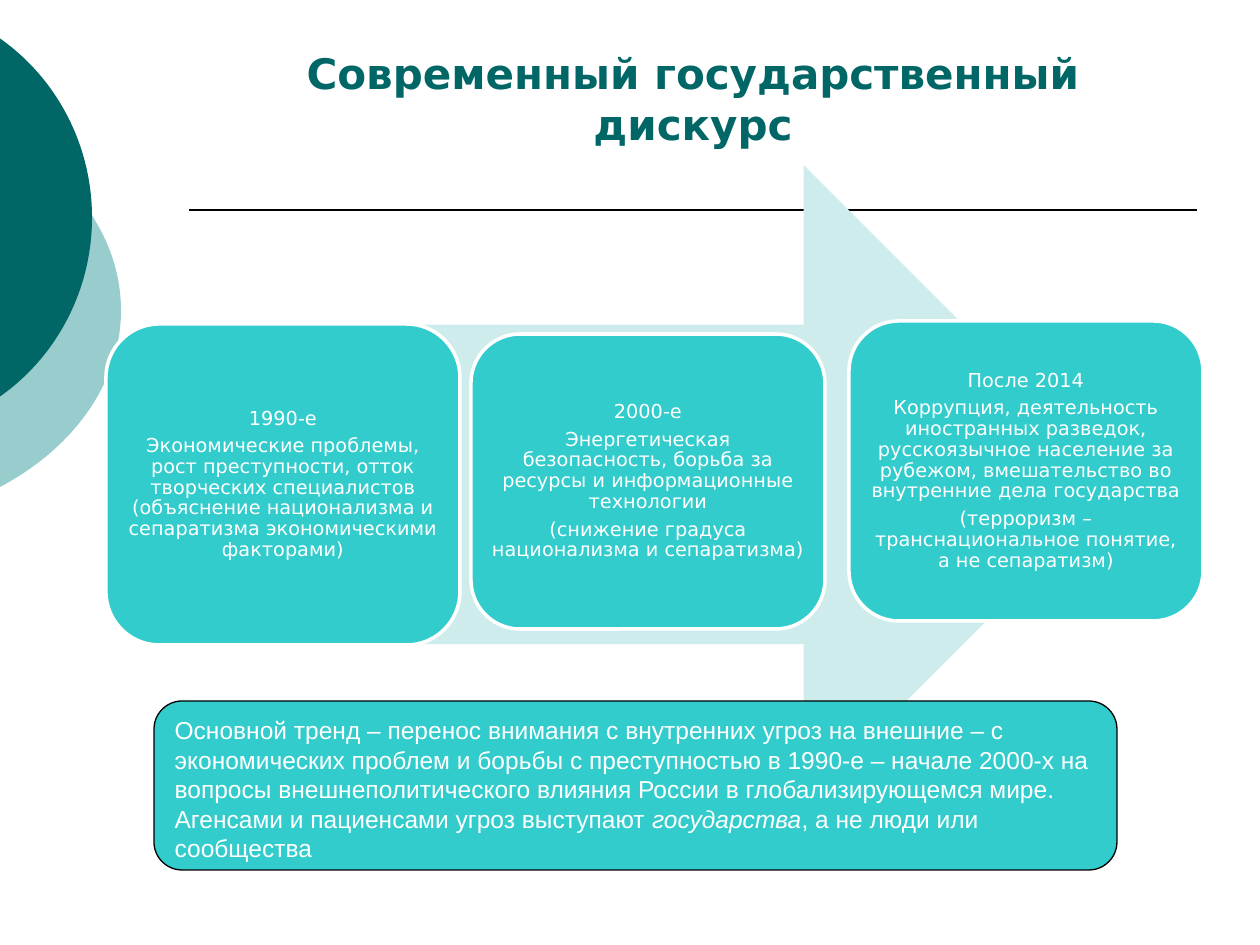
"""Build a slide on how the state discourse on threats shifted over three periods."""
import lxml.etree
import pptx
import pptx.dml.color
import pptx.enum.shapes
import pptx.enum.text
import pptx.oxml.ns
import pptx.util

SCALE = 914400 / 126
DARK_TEAL = pptx.dml.color.RGBColor(0x00, 0x66, 0x66)
PALE_TEAL = pptx.dml.color.RGBColor(0x99, 0xCC, 0xCC)
TURQUOISE = pptx.dml.color.RGBColor(0x33, 0xCC, 0xCC)
ARROW_TINT = pptx.dml.color.RGBColor(0xCE, 0xEC, 0xEC)
WHITE = pptx.dml.color.RGBColor(0xFF, 0xFF, 0xFF)
BLACK = pptx.dml.color.RGBColor(0x00, 0x00, 0x00)
SHAPES = pptx.enum.shapes.MSO_SHAPE
ALIGN = pptx.enum.text.PP_ALIGN
ANCHOR = pptx.enum.text.MSO_ANCHOR


def px(*lengths):
    return [pptx.util.Emu(round(length * SCALE)) for length in lengths]


def paint(shape, fill, line=None, width=0):
    shape.shadow.inherit = False
    shape.fill.solid()
    shape.fill.fore_color.rgb = fill
    if line is None:
        shape.line.fill.background()
    else:
        shape.line.color.rgb = line
        shape.line.width = pptx.util.Pt(width)


deck = pptx.Presentation()
deck.slide_width, deck.slide_height = px(1260, 945)
page = deck.slides.add_slide(deck.slide_layouts[6])

discs = [
    (-446, 95, 567, 431, PALE_TEAL),
    (-334, 0, 426, 435, DARK_TEAL),
]
for left, top, width, height, color in discs:
    disc = page.shapes.add_shape(SHAPES.OVAL, *px(left, top, width, height))
    paint(disc, color)

rule = page.shapes.add_connector(
    pptx.enum.shapes.MSO_CONNECTOR.STRAIGHT, *px(189, 210, 1197, 210)
)
rule.line.color.rgb = BLACK
rule.line.width = pptx.util.Pt(1)
lxml.etree.SubElement(rule._element.spPr, pptx.oxml.ns.qn("a:effectLst"))

title = page.shapes.add_textbox(*px(189, 42, 1008, 113))
frame = title.text_frame
frame.word_wrap = True
frame.vertical_anchor = ANCHOR.BOTTOM
frame.text = "Современный государственный дискурс"
para = frame.paragraphs[0]
para.alignment = ALIGN.CENTER
span = para.runs[0]
span.font.name = "DejaVu Sans"
span.font.size = pptx.util.Pt(24)
span.font.bold = True
span.font.color.rgb = DARK_TEAL

arrow = page.shapes.add_shape(SHAPES.RIGHT_ARROW, *px(187, 165, 936, 639))
paint(arrow, ARROW_TINT)

periods = [
    (106, 324, 321, [
        "1990-е",
        "Экономические проблемы, рост преступности, отток творческих специалистов "
        "(объяснение национализма и сепаратизма экономическими факторами)",
    ]),
    (471, 334, 295, [
        "2000-е",
        "Энергетическая безопасность, борьба за ресурсы и информационные технологии",
        "(снижение градуса национализма и сепаратизма)",
    ]),
    (849, 321, 300, [
        "После 2014",
        "Коррупция, деятельность иностранных разведок, русскоязычное население за "
        "рубежом, вмешательство во внутренние дела государства",
        "(терроризм – транснациональное понятие, а не сепаратизм)",
    ]),
]
for left, top, height, lines in periods:
    box = page.shapes.add_shape(SHAPES.ROUNDED_RECTANGLE, *px(left, top, 354, height))
    paint(box, TURQUOISE, WHITE, 2)
    frame = box.text_frame
    frame.word_wrap = True
    frame.vertical_anchor = ANCHOR.MIDDLE
    frame.margin_left, frame.margin_top, frame.margin_right, frame.margin_bottom = px(6, 6, 6, 6)
    frame.text = "\n".join(lines)
    for para in frame.paragraphs:
        para.alignment = ALIGN.CENTER
        para.line_spacing = 0.9
        para.space_after = pptx.util.Pt(3.85)
        span = para.runs[0]
        span.font.name = "DejaVu Sans"
        span.font.size = pptx.util.Pt(11)
        span.font.color.rgb = WHITE

summary = page.shapes.add_shape(SHAPES.ROUNDED_RECTANGLE, *px(154, 701, 963, 169))
paint(summary, TURQUOISE, BLACK, 0.75)
frame = summary.text_frame
frame.word_wrap = True
frame.vertical_anchor = ANCHOR.TOP
para = frame.paragraphs[0]
para.alignment = ALIGN.LEFT
phrases = [
    ("Основной тренд – перенос внимания с внутренних угроз на внешние – с "
     "экономических проблем и борьбы с преступностью в 1990-е – начале 2000-х на "
     "вопросы внешнеполитического влияния России в глобализирующемся мире. "
     "Агенсами и пациенсами угроз выступают ", False),
    ("государства", True),
    (", а не люди или сообщества", False),
]
for words, italic in phrases:
    span = para.add_run()
    span.text = words
    span.font.name = "Arial"
    span.font.size = pptx.util.Pt(14)
    span.font.italic = italic
    span.font.color.rgb = WHITE

deck.save("out.pptx")
